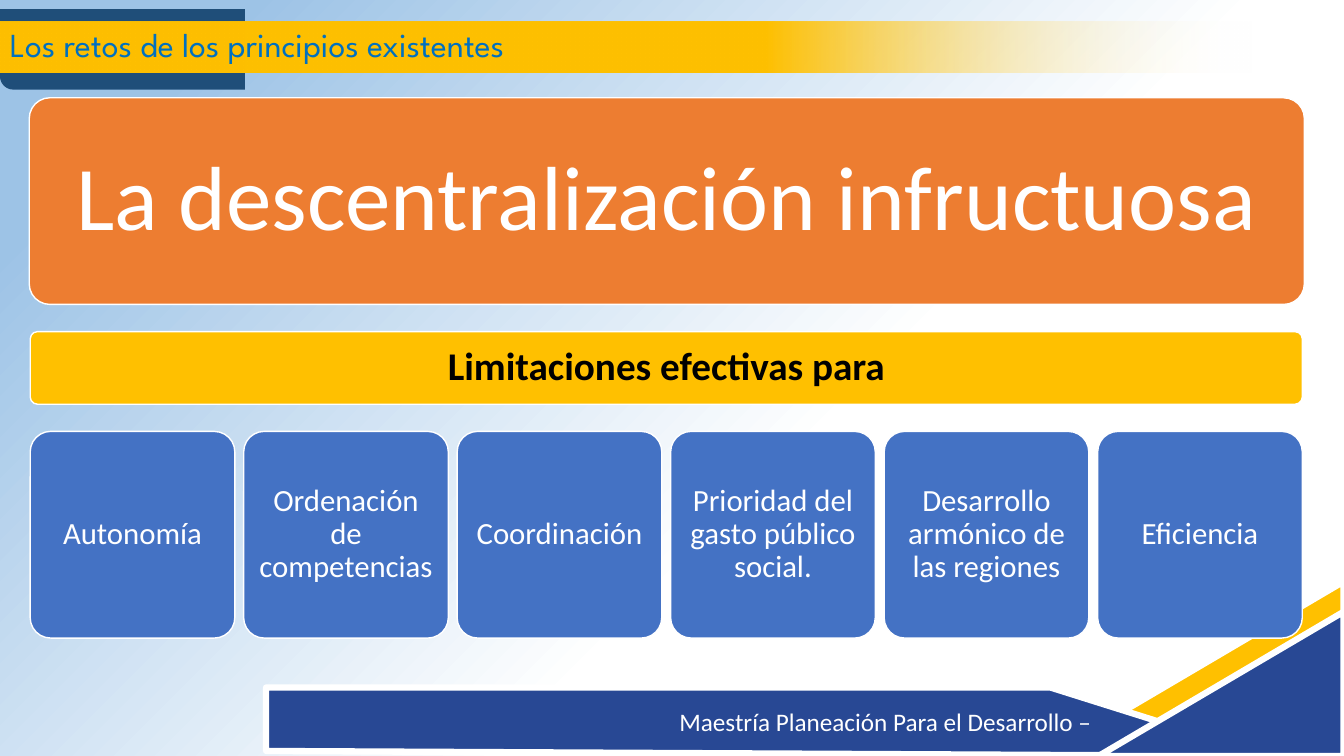
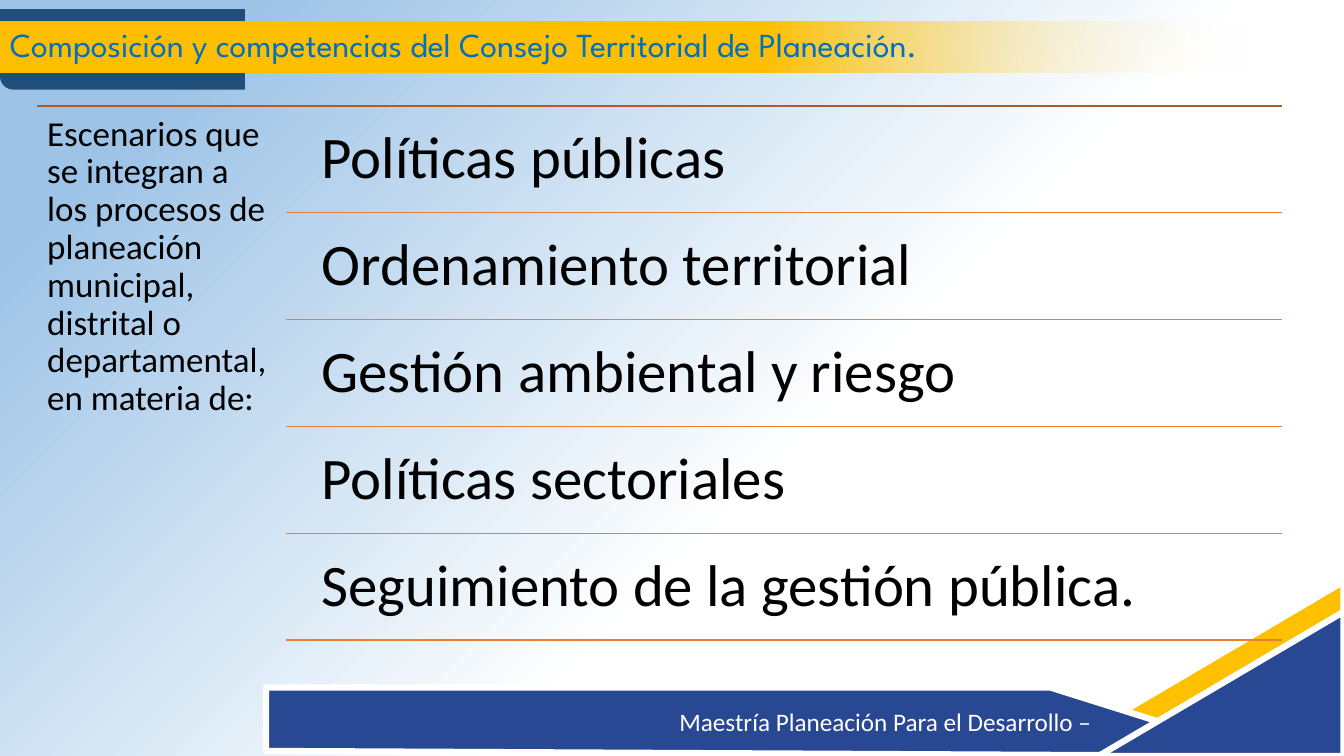
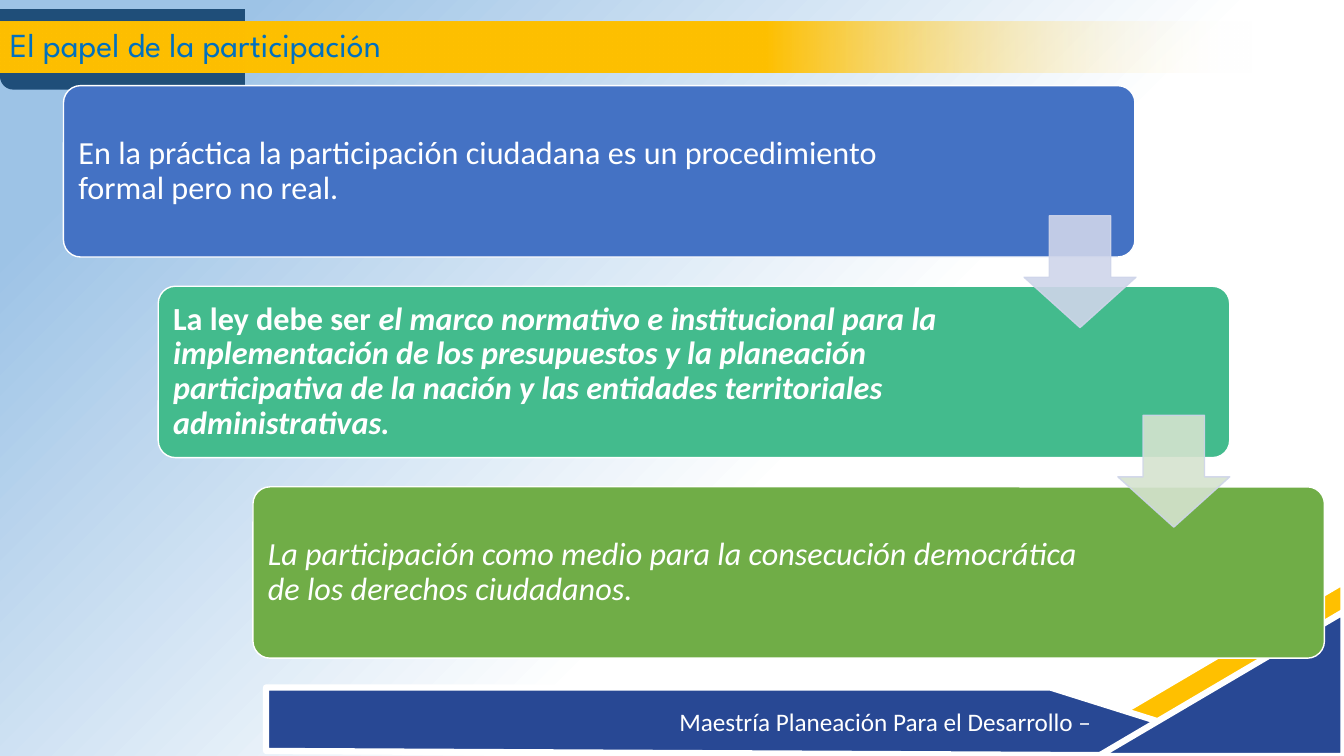
import lxml.etree
import pptx
import pptx.dml.color
import pptx.enum.shapes
import pptx.enum.text
import pptx.oxml.ns
import pptx.util

RGB = pptx.dml.color.RGBColor
SHAPE = pptx.enum.shapes.MSO_SHAPE
ALIGN = pptx.enum.text.PP_ALIGN
ANCHOR = pptx.enum.text.MSO_ANCHOR
qn = pptx.oxml.ns.qn

PX = 9144  # 100 px to the inch
WIDTH, HEIGHT = 1333, 750

WHITE = RGB(0xFF, 0xFF, 0xFF)
BLACK = RGB(0x00, 0x00, 0x00)
SKY = RGB(0x9D, 0xC3, 0xE6)
GOLD = RGB(0xFF, 0xC0, 0x00)
NAVY = RGB(0x28, 0x48, 0x94)
TAB_BLUE = RGB(0x1F, 0x4E, 0x79)
TITLE_BLUE = RGB(0x00, 0x70, 0xC0)
ORANGE = RGB(0xED, 0x7D, 0x31)
BROWN = RGB(0xAF, 0x5C, 0x24)
BLUE = RGB(0x44, 0x72, 0xC4)
TEAL = RGB(0x43, 0xBB, 0x8D)
GREEN = RGB(0x70, 0xAD, 0x47)
PALE_BLUE = RGB(0xCF, 0xD5, 0xEA)
PALE_GREEN = RGB(0xD5, 0xE3, 0xCF)

BODY_FONT = "Calibri"
TITLE_FONT = "League Spartan"


def add_box(s, kind, x, y, w, h, fill, line=None, line_pt=1, adj=()):
    """Add a preset shape; fill None leaves the fill to the caller."""
    sp = s.shapes.add_shape(kind, *(round(v * PX) for v in (x, y, w, h)))
    sp.shadow.inherit = False
    for i, value in enumerate(adj):
        sp.adjustments[i] = value
    if fill is not None:
        sp.fill.solid()
        sp.fill.fore_color.rgb = fill
    if line is None:
        sp.line.fill.background()
    else:
        sp.line.color.rgb = line
        sp.line.width = pptx.util.Pt(line_pt)
    return sp


def write(sp, runs, size, color, insets, font=BODY_FONT, align=ALIGN.LEFT,
          anchor=ANCHOR.MIDDLE, spacing=0.9):
    """Write (text, bold, italic) runs; insets are left, top, right, bottom."""
    tf = sp.text_frame
    tf.word_wrap = True
    tf.vertical_anchor = anchor
    tf.margin_left, tf.margin_top, tf.margin_right, tf.margin_bottom = (
        v * PX for v in insets)
    p = tf.paragraphs[0]
    p.alignment = align
    p.line_spacing = spacing
    for text, bold, italic in runs:
        r = p.add_run()
        r.text = text
        r.font.name = font
        r.font.size = pptx.util.Pt(size)
        r.font.bold = bold
        r.font.italic = italic
        r.font.color.rgb = color


prs = pptx.Presentation()
prs.slide_width, prs.slide_height = 12192000, HEIGHT * PX

# Shared background, corner, footer and title band
titles = [
    "Los retos de los principios existentes",
    "Composición y competencias del Consejo Territorial de Planeación.",
    "El papel de la participación",
]
slides = []
for title in titles:
    s = prs.slides.add_slide(prs.slide_layouts[6])
    slides.append(s)
    background = s.background.fill

    gold_corner = add_box(s, SHAPE.RIGHT_TRIANGLE, 1090, 577, 243, 143, GOLD, WHITE, 4.5)

    outline = s.shapes.build_freeform(264, 682, PX)
    outline.add_line_segments([(1042, 682), (1258, 750), (264, 745)])
    footer = outline.convert_to_shape()
    footer.shadow.inherit = False
    footer.fill.solid()
    footer.fill.fore_color.rgb = NAVY
    footer.line.color.rgb = WHITE
    footer.line.width = pptx.util.Pt(4.5)
    write(footer, [("Maestría Planeación Para el Desarrollo –", False, False)], 18, WHITE,
          (410, 5, 10, 5), spacing=1.0)

    navy_corner = add_box(s, SHAPE.RIGHT_TRIANGLE, 1090, 607, 243, 143, NAVY, WHITE, 4.5)
    tab = add_box(s, SHAPE.ROUND_1_RECTANGLE, 0, 9, 243, 80, TAB_BLUE)
    for sp in (gold_corner, navy_corner, tab):
        sp.element.xpath(".//a:xfrm")[0].set("flipH", "1")
    tab.element.xpath(".//a:xfrm")[0].set("flipV", "1")

    band = add_box(s, SHAPE.RECTANGLE, 0, 21, 1242, 51, None)
    write(band, [(title, False, False)], 24, TITLE_BLUE, (10, 5, 10, 5), TITLE_FONT)

    # Both gradients fade to transparent white
    for fill, owner, angle, stops in (
        (background, s.background._cSld.bg, 315, ((0.12, SKY), (0.6, WHITE))),
        (band.fill, band.element, 0, ((0.61, GOLD), (1, WHITE))),
    ):
        fill.gradient()
        fill.gradient_angle = angle
        for stop, (position, color) in zip(fill.gradient_stops, stops):
            stop.position = position
            stop.color.rgb = color
        last_color = owner.findall(".//" + qn("a:gs"))[-1][0]
        lxml.etree.SubElement(last_color, qn("a:alpha"), val="0")

principles, council, participation = slides

# Slide 1: a headline, a bar and a row of limits
blocks = [
    (29, 97, 1265, 205, ORANGE, "La descentralización infructuosa", 65, WHITE, 27, False),
    (30, 329, 1262, 72, GOLD, "Limitaciones efectivas para", 28, BLACK, 12, True),
]
limits = ["Autonomía", "Ordenación de competencias", "Coordinación",
          "Prioridad del gasto público social.", "Desarrollo armónico de las regiones",
          "Eficiencia"]
limit_w = 203
pitch = (1262 - limit_w) / (len(limits) - 1)
for i, limit in enumerate(limits):
    blocks.append((30 + i * pitch, 428, limit_w, 205, BLUE, limit, 22, WHITE, 9, False))
for x, y, w, h, fill, text, size, color, inset, bold in blocks:
    sp = add_box(principles, SHAPE.ROUNDED_RECTANGLE, x, y, w, h, fill, WHITE, adj=[0.1])
    write(sp, [(text, bold, False)], size, color, [inset] * 4, align=ALIGN.CENTER)

# Slide 2: an introduction beside ruled rows
topics = ["Políticas públicas", "Ordenamiento territorial", "Gestión ambiental y riesgo",
          "Políticas sectoriales", "Seguimiento de la gestión pública."]
intro = ("Escenarios que se integran a los procesos de planeación municipal, distrital o "
         "departamental, en materia de:")
row_h = 106
texts = [(37, 105, 247, 536, intro, 25, 10)]
rules = [(37, 105, BROWN)]
for i, topic in enumerate(topics):
    texts.append((302, 110 + i * row_h, 970, 101, topic, 42, 17))
    rules.append((284, 105 + (i + 1) * row_h, ORANGE))
for x, y, color in rules:
    rule = council.shapes.add_connector(
        pptx.enum.shapes.MSO_CONNECTOR.STRAIGHT, x * PX, y * PX, 1272 * PX, y * PX)
    rule.line.color.rgb = color
    rule.line.width = pptx.util.Pt(1)
    lxml.etree.SubElement(rule.element.spPr, qn("a:effectLst"))
for x, y, w, h, text, size, inset in texts:
    sp = council.shapes.add_textbox(x * PX, y * PX, w * PX, h * PX)
    write(sp, [(text, False, False)], size, BLACK, [inset] * 4, anchor=ANCHOR.TOP)

# Slide 3: three staggered steps joined by arrows
steps = [
    (BLUE, 184, [("En la práctica la participación ciudadana es un procedimiento formal "
                  "pero no real.", False, False)]),
    (TEAL, 214, [("La ley debe ser ", True, False),
                 ("el marco normativo e institucional para la implementación de los "
                  "presupuestos y la planeación participativa de la nación y las entidades "
                  "territoriales administrativas.", True, True)]),
    (GREEN, 214, [("La participación como medio para la consecución democrática de los "
                   "derechos ciudadanos.", False, True)]),
]
for i, (fill, right_inset, runs) in enumerate(steps):
    sp = add_box(participation, SHAPE.ROUNDED_RECTANGLE, 63 + 94 * i, 85 + 199 * i, 1063, 170,
                 fill, WHITE, adj=[0.1])
    write(sp, runs, 23, WHITE, (10, 10, right_inset, 10))
for i, fill in enumerate((PALE_BLUE, PALE_GREEN)):
    arrow = add_box(participation, SHAPE.DOWN_ARROW, 1016 + 93 * i, 214 + 198 * i, 111, 111,
                    fill, PALE_BLUE, adj=[0.55, 0.45])
    for color in arrow.element.spPr.iter(qn("a:srgbClr")):
        lxml.etree.SubElement(color, qn("a:alpha"), val="90000")

# DOWN_ARROW adjustments are shaft width, then head length
prs.save("out.pptx")
